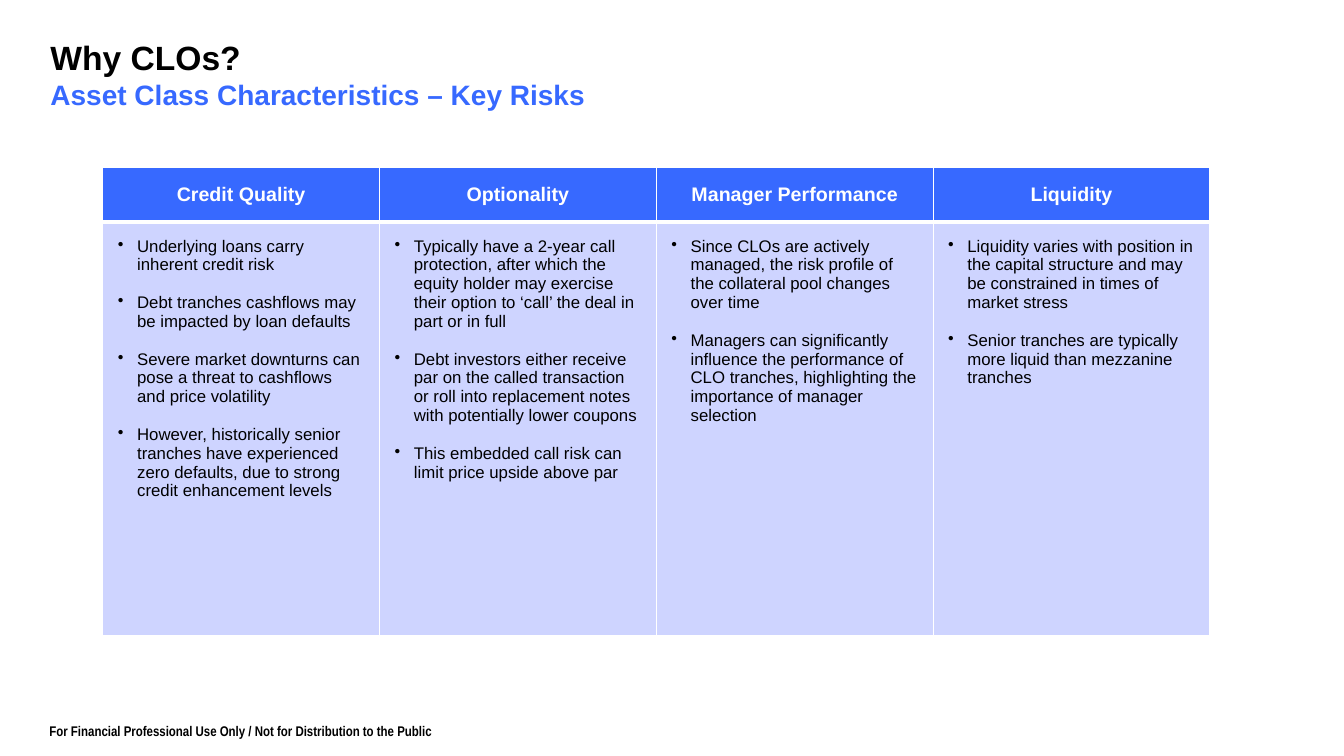
import lxml.etree
import pptx
import pptx.dml.color
import pptx.enum.text
import pptx.oxml.ns
import pptx.util

BLACK = pptx.dml.color.RGBColor(0x00, 0x00, 0x00)
WHITE = pptx.dml.color.RGBColor(0xFF, 0xFF, 0xFF)
BLUE = pptx.dml.color.RGBColor(0x37, 0x69, 0xFF)
LAVENDER = pptx.dml.color.RGBColor(0xCE, 0xD4, 0xFF)

Inches = pptx.util.Inches
Pt = pptx.util.Pt
qn = pptx.oxml.ns.qn
Anchor = pptx.enum.text.MSO_ANCHOR
Align = pptx.enum.text.PP_ALIGN

HEADER_HEIGHT = 0.54
CELL_INSET = Inches(0.15)
BULLET_INDENT = Inches(0.19)

RISKS = {
    "Credit Quality": [
        "Underlying loans carry inherent credit risk",
        "Debt tranches cashflows may be impacted by loan defaults",
        "Severe market downturns can pose a threat to cashflows and price volatility",
        "However, historically senior tranches have experienced zero defaults, "
        "due to strong credit enhancement levels",
    ],
    "Optionality": [
        "Typically have a 2-year call protection, after which the equity holder "
        "may exercise their option to ‘call’ the deal in part or in full",
        "Debt investors either receive par on the called transaction or roll into "
        "replacement notes with potentially lower coupons",
        "This embedded call risk can limit price upside above par",
    ],
    "Manager Performance": [
        "Since CLOs are actively managed, the risk profile of the collateral pool "
        "changes over time",
        "Managers can significantly influence the performance of CLO tranches, "
        "highlighting the importance of manager selection",
    ],
    "Liquidity": [
        "Liquidity varies with position in the capital structure and may be "
        "constrained in times of market stress",
        "Senior tranches are typically more liquid than mezzanine tranches",
    ],
}


def style_paragraph(paragraph, size, color, bold, name="Arial"):
    font = paragraph.font
    font.size, font.bold, font.name = Pt(size), bold, name
    font.color.rgb = color


def add_text(slide, box, lines, anchor=Anchor.TOP):
    frame = slide.shapes.add_textbox(*map(Inches, box)).text_frame
    frame.word_wrap = True
    frame.vertical_anchor = anchor
    frame.margin_left = frame.margin_right = frame.margin_top = frame.margin_bottom = 0
    for index, (text, size, color, name) in enumerate(lines):
        paragraph = frame.add_paragraph() if index else frame.paragraphs[0]
        paragraph.text = text
        style_paragraph(paragraph, size, color, True, name)


def style_cell(cell, fill, anchor, bottom_width):
    cell.fill.solid()
    cell.fill.fore_color.rgb = fill
    cell.vertical_anchor = anchor
    cell.margin_left = cell.margin_right = CELL_INSET
    cell.margin_top = cell.margin_bottom = CELL_INSET
    properties = cell._tc.get_or_add_tcPr()
    for index, side in enumerate(("lnL", "lnR", "lnT", "lnB")):
        width = bottom_width if side == "lnB" else 1
        line = lxml.etree.Element(qn("a:" + side), w=str(Pt(width)))
        solid = lxml.etree.SubElement(line, qn("a:solidFill"))
        lxml.etree.SubElement(solid, qn("a:srgbClr"), val=str(WHITE))
        properties.insert(index, line)


def add_bullets(cell, items):
    frame = cell.text_frame
    for index, item in enumerate(items):
        paragraph = frame.add_paragraph() if index else frame.paragraphs[0]
        paragraph.text = item
        properties = paragraph._p.get_or_add_pPr()
        properties.set("marL", str(BULLET_INDENT))
        properties.set("indent", str(-BULLET_INDENT))
        lxml.etree.SubElement(properties, qn("a:buChar"), char="•")
        if index < len(items) - 1:
            paragraph.space_after = Pt(13.5)
        style_paragraph(paragraph, 12, BLACK, False)


def add_risk_table(slide, box):
    left, top, width, height = box
    table = slide.shapes.add_table(2, len(RISKS), *map(Inches, box)).table
    table.rows[0].height = Inches(HEADER_HEIGHT)
    table.rows[1].height = Inches(height - HEADER_HEIGHT)
    for column, (heading, items) in enumerate(RISKS.items()):
        table.columns[column].width = Inches(width / len(RISKS))
        header, body = table.cell(0, column), table.cell(1, column)
        style_cell(header, BLUE, Anchor.MIDDLE, 3)
        header.text = heading
        paragraph = header.text_frame.paragraphs[0]
        paragraph.alignment = Align.CENTER
        style_paragraph(paragraph, 14, WHITE, True)
        style_cell(body, LAVENDER, Anchor.TOP, 1)
        add_bullets(body, items)


def main():
    presentation = pptx.Presentation()
    presentation.slide_width = Inches(13.33)
    presentation.slide_height = Inches(7.5)
    slide = presentation.slides.add_slide(presentation.slide_layouts[6])
    add_text(slide, (0.49, 7.15, 12, 0.18), [
        ("For Financial Professional Use Only / Not for Distribution to the Public",
         10, BLACK, "Arial Narrow"),
    ], Anchor.BOTTOM)
    add_risk_table(slide, (1.02, 1.66, 10.98, 4.65))
    add_text(slide, (0.5, 0.37, 9.33, 0.84), [
        ("Why CLOs?", 24, BLACK, "Arial"),
        ("Asset Class Characteristics – Key Risks", 20, BLUE, "Arial"),
    ])
    presentation.save("out.pptx")


if __name__ == "__main__":
    main()
